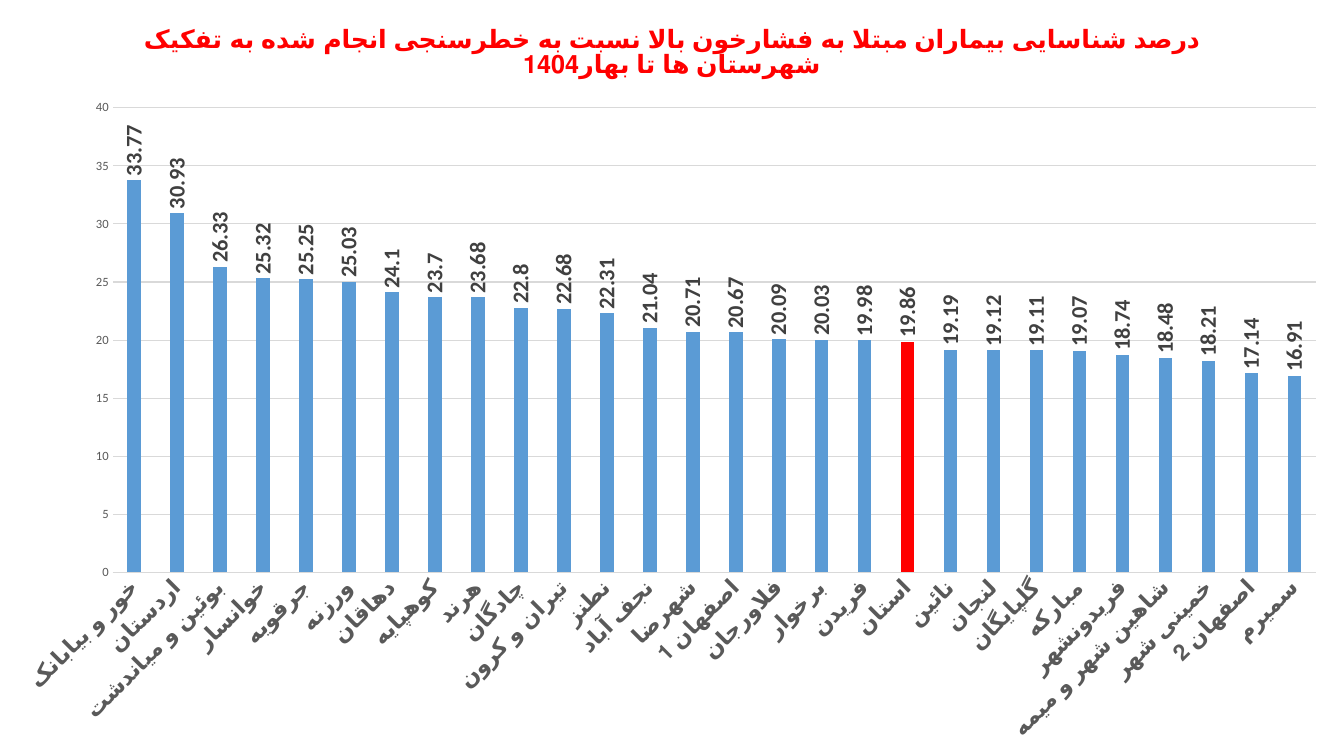
"""Build a slide with one column chart of blood pressure detection by county."""
from typing import NamedTuple

from pptx import Presentation
from pptx.chart.data import CategoryChartData as ChartData
from pptx.dml.color import RGBColor
from pptx.enum.chart import XL_CHART_TYPE as ChartType
from pptx.enum.chart import XL_LABEL_POSITION as LabelPosition
from pptx.enum.chart import XL_TICK_MARK as TickMark
from pptx.oxml import parse_xml
from pptx.oxml.ns import nsdecls
from pptx.util import Pt

WIDTH, HEIGHT = 960, 540
BLUE, RED, GRAY, DARK, PALE = "5B9BD5", "FF0000", "595959", "404040", "D9D9D9"
TITLE = (
    "درصد شناسایی بیماران مبتلا به فشارخون بالا نسبت به خطرسنجی انجام شده "
    "به تفکیک شهرستان ها تا بهار1404"
)
PROVINCE = "استان"


class County(NamedTuple):
    name: str
    percent: float


COUNTIES = [
    County("خور و بیابانک", 33.77),
    County("اردستان", 30.93),
    County("بوئین و میاندشت", 26.33),
    County("خوانسار", 25.32),
    County("جرقویه", 25.25),
    County("ورزنه", 25.03),
    County("دهاقان", 24.1),
    County("کوهپایه", 23.7),
    County("هرند", 23.68),
    County("چادگان", 22.8),
    County("تیران و کرون", 22.68),
    County("نطنز", 22.31),
    County("نجف آباد", 21.04),
    County("شهرضا", 20.71),
    County("اصفهان 1", 20.67),
    County("فلاورجان", 20.09),
    County("برخوار", 20.03),
    County("فریدن", 19.98),
    County(PROVINCE, 19.86),
    County("نائین", 19.19),
    County("لنجان", 19.12),
    County("گلپایگان", 19.11),
    County("مبارکه", 19.07),
    County("فریدونشهر", 18.74),
    County("شاهین شهر و میمه", 18.48),
    County("خمینی شهر", 18.21),
    County("اصفهان 2", 17.14),
    County("سمیرم", 16.91),
]


def paint(fill, color: str) -> None:
    fill.solid()
    fill.fore_color.rgb = RGBColor.from_string(color)


def style_font(font, size: float, color: str, bold: bool = False) -> None:
    font.name = "Calibri"
    font.size = Pt(size)
    font.bold = bold
    paint(font.fill, color)


def style_line(line, color: str) -> None:
    line.width = Pt(0.75)
    paint(line.fill, color)


def rotate_text(owner, degrees: int) -> None:
    for body in owner._element.xpath("c:txPr/a:bodyPr"):
        body.set("rot", str(degrees * 60000))
        body.set("vert", "horz")


def write_title(chart, text: str, *, size: float, color: str, bold: bool) -> None:
    chart.has_title = True
    chart.chart_title.include_in_layout = False
    para = chart.chart_title.text_frame.paragraphs[0]
    para._p.get_or_add_pPr().set("rtl", "1")
    span = para.add_run()
    span.text = text
    style_font(span.font, size, color, bold)


def place_plot(chart, left: float, top: float, width: float, height: float) -> None:
    shares = {"x": left / WIDTH, "y": top / HEIGHT, "w": width / WIDTH, "h": height / HEIGHT}
    sizes = "".join(f'<c:{key} val="{share:.4f}"/>' for key, share in shares.items())
    plot_area = chart._chartSpace.xpath("c:chart/c:plotArea")[0]
    for layout in plot_area.xpath("c:layout"):
        plot_area.remove(layout)
    plot_area.insert(0, parse_xml(
        f'<c:layout {nsdecls("c")}><c:manualLayout><c:layoutTarget val="inner"/>'
        f'<c:xMode val="edge"/><c:yMode val="edge"/>{sizes}</c:manualLayout></c:layout>'
    ))


def style_axes(chart) -> None:
    names, scale = chart.category_axis, chart.value_axis
    for axis in (names, scale):
        axis.major_tick_mark = axis.minor_tick_mark = TickMark.NONE
    names.has_major_gridlines = False
    style_font(names.tick_labels.font, 16, GRAY, bold=True)
    rotate_text(names, -45)
    style_line(names.format.line, PALE)
    scale.minimum_scale, scale.maximum_scale, scale.major_unit = 0, 40, 5
    style_font(scale.tick_labels.font, 9, GRAY)
    scale.format.line.fill.background()
    scale.has_major_gridlines = True
    style_line(scale.major_gridlines.format.line, PALE)


def style_columns(chart) -> None:
    plot = chart.plots[0]
    plot.gap_width, plot.overlap = 219, -27
    plot.vary_by_categories = False
    series = plot.series[0]
    series.invert_if_negative = False
    paint(series.format.fill, BLUE)
    province = [county.name for county in COUNTIES].index(PROVINCE)
    paint(series.points[province].format.fill, RED)
    labels = series.data_labels
    labels.show_value = True
    labels.position = LabelPosition.OUTSIDE_END
    style_font(labels.font, 16, DARK, bold=True)
    rotate_text(labels, -90)


def main() -> None:
    deck = Presentation()
    deck.slide_width, deck.slide_height = Pt(WIDTH), Pt(HEIGHT)
    page = deck.slides.add_slide(deck.slide_layouts[6])
    data = ChartData()
    data.categories = [county.name for county in COUNTIES]
    data.add_series("Series 1", [county.percent for county in COUNTIES])
    frame = page.shapes.add_chart(
        ChartType.COLUMN_CLUSTERED, Pt(0), Pt(0), Pt(WIDTH), Pt(HEIGHT), data
    )
    chart = frame.chart
    chart.has_legend = False
    style_font(chart.font, 10, "000000")
    write_title(chart, TITLE, size=18, color=RED, bold=True)
    place_plot(chart, 80.5, 77, 859.5, 332)
    style_axes(chart)
    style_columns(chart)
    deck.save("out.pptx")


if __name__ == "__main__":
    main()
